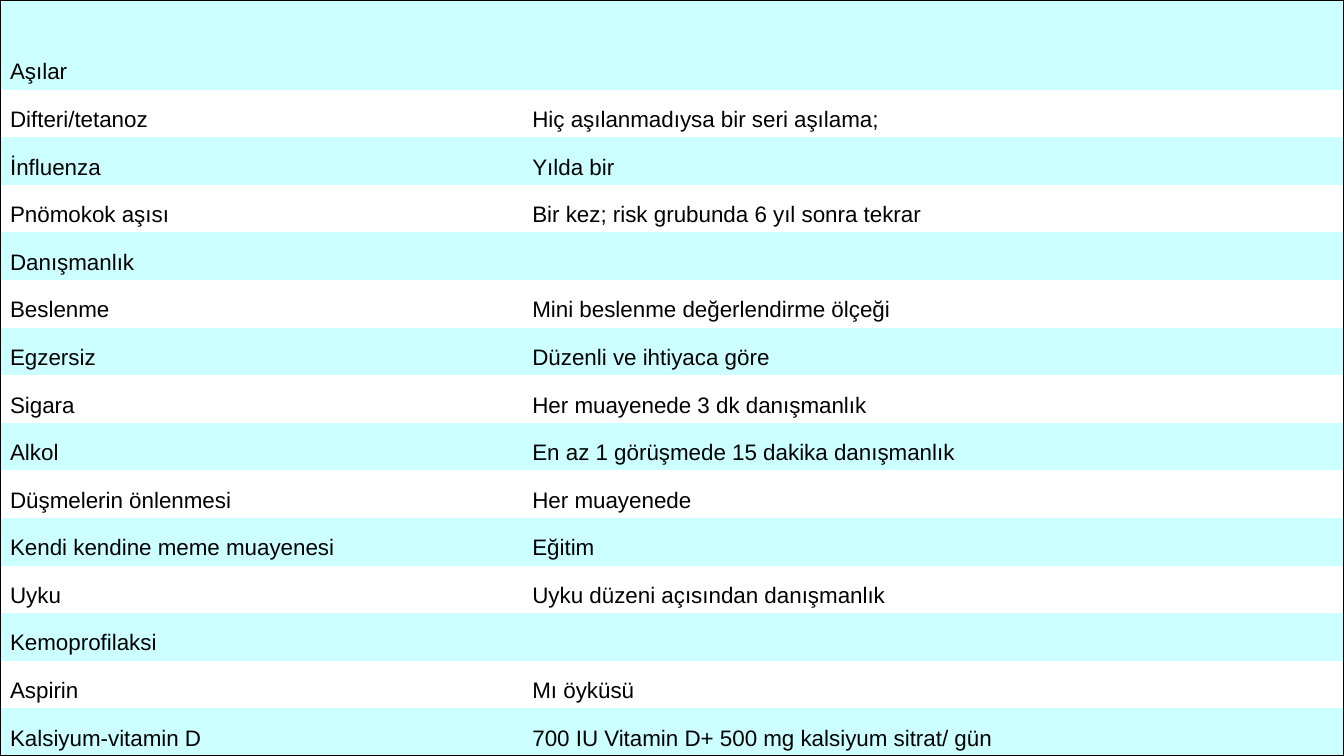
import pptx
import pptx.dml.color
import pptx.enum.text
import pptx.oxml
import pptx.oxml.ns
import pptx.util

Inches = pptx.util.Inches

# Content: health topic and recommendation
ROWS = [
    ("Aşılar", ""),
    ("Difteri/tetanoz", "Hiç aşılanmadıysa bir seri aşılama;"),
    ("İnfluenza", "Yılda bir"),
    ("Pnömokok aşısı", "Bir kez; risk grubunda 6 yıl sonra tekrar"),
    ("Danışmanlık", ""),
    ("Beslenme", "Mini beslenme değerlendirme ölçeği"),
    ("Egzersiz", "Düzenli ve ihtiyaca göre"),
    ("Sigara", "Her muayenede 3 dk danışmanlık"),
    ("Alkol", "En az 1 görüşmede 15 dakika danışmanlık"),
    ("Düşmelerin önlenmesi", "Her muayenede"),
    ("Kendi kendine meme muayenesi", "Eğitim"),
    ("Uyku", "Uyku düzeni açısından danışmanlık"),
    ("Kemoprofilaksi", ""),
    ("Aspirin", "Mı öyküsü"),
    ("Kalsiyum-vitamin D", "700 IU Vitamin D+ 500 mg kalsiyum sitrat/ gün"),
]

THEME = {
    "bands": ("CCFFFF", "FFFFFF"),
    "text": "000000",
    "border": "000000",
    "border_width": pptx.util.Pt(1),
    "font": {"name": "Arial", "size": pptx.util.Pt(16), "bold": False},
}
WIDTH, HEIGHT = 13.33, 7.5
TOPIC_WIDTH = 5.18
FIRST_HEIGHT = 0.89
ROW_HEIGHT = (HEIGHT - FIRST_HEIGHT) / (len(ROWS) - 1)


def color(value):
    return pptx.dml.color.RGBColor.from_string(value)


def set_format(target, values):
    for name, value in values.items():
        setattr(target, name, value)


def set_borders(cell, visible_edges):
    """Draw the visible edges and clear the others."""
    properties = cell._tc.get_or_add_tcPr()
    for index, edge in enumerate("LRTB"):
        paint = "<a:noFill/>"
        if edge in visible_edges:
            paint = f'<a:solidFill><a:srgbClr val="{THEME["border"]}"/></a:solidFill>'
        line = pptx.oxml.parse_xml(
            f'<a:ln{edge} {pptx.oxml.ns.nsdecls("a")} '
            f'w="{THEME["border_width"]}">{paint}</a:ln{edge}>')
        properties.insert(index, line)


def outer_edges(row, column):
    edges = "LR"[column]
    if row == 0:
        edges += "T"
    if row == len(ROWS) - 1:
        edges += "B"
    return edges


def fill_cell(cell, text, row, column):
    cell.fill.solid()
    cell.fill.fore_color.rgb = color(THEME["bands"][row % 2])
    cell.vertical_anchor = pptx.enum.text.MSO_ANCHOR.BOTTOM
    paragraph = cell.text_frame.paragraphs[0]
    if text:
        paragraph.text = text
    set_format(paragraph.font, THEME["font"])
    paragraph.font.color.rgb = color(THEME["text"])
    set_borders(cell, outer_edges(row, column))


def main():
    presentation = pptx.Presentation()
    set_format(presentation, {"slide_width": Inches(WIDTH),
                              "slide_height": Inches(HEIGHT)})
    slide = presentation.slides.add_slide(presentation.slide_layouts[6])

    # Full-slide table
    table = slide.shapes.add_table(len(ROWS), 2, 0, 0,
                                   Inches(WIDTH), Inches(HEIGHT)).table
    set_format(table, {"first_row": False, "horz_banding": False})
    for column, width in enumerate((TOPIC_WIDTH, WIDTH - TOPIC_WIDTH)):
        table.columns[column].width = Inches(width)
    for row, texts in enumerate(ROWS):
        table.rows[row].height = Inches(ROW_HEIGHT if row else FIRST_HEIGHT)
        for column, text in enumerate(texts):
            fill_cell(table.cell(row, column), text, row, column)

    presentation.save("out.pptx")


if __name__ == "__main__":
    main()
